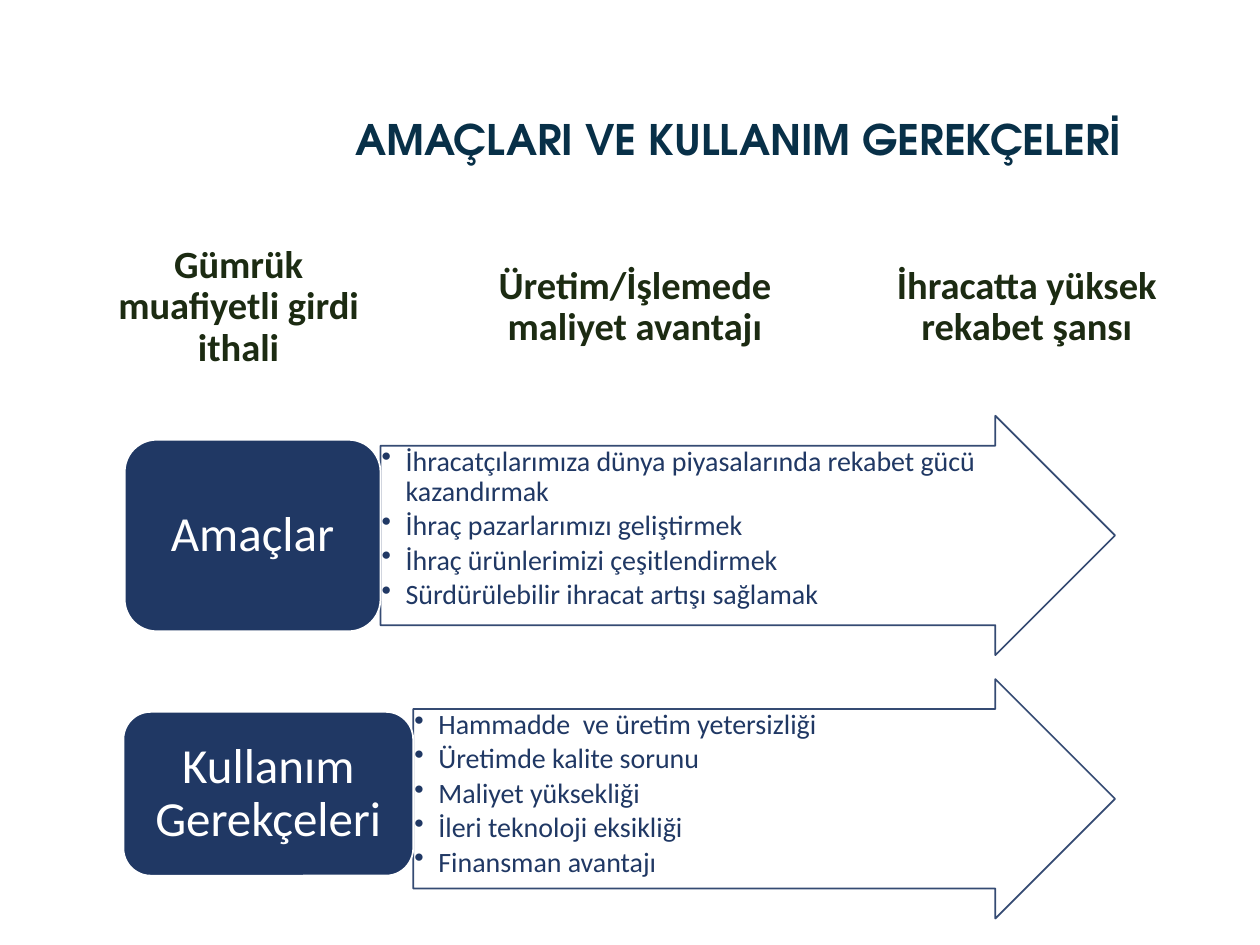
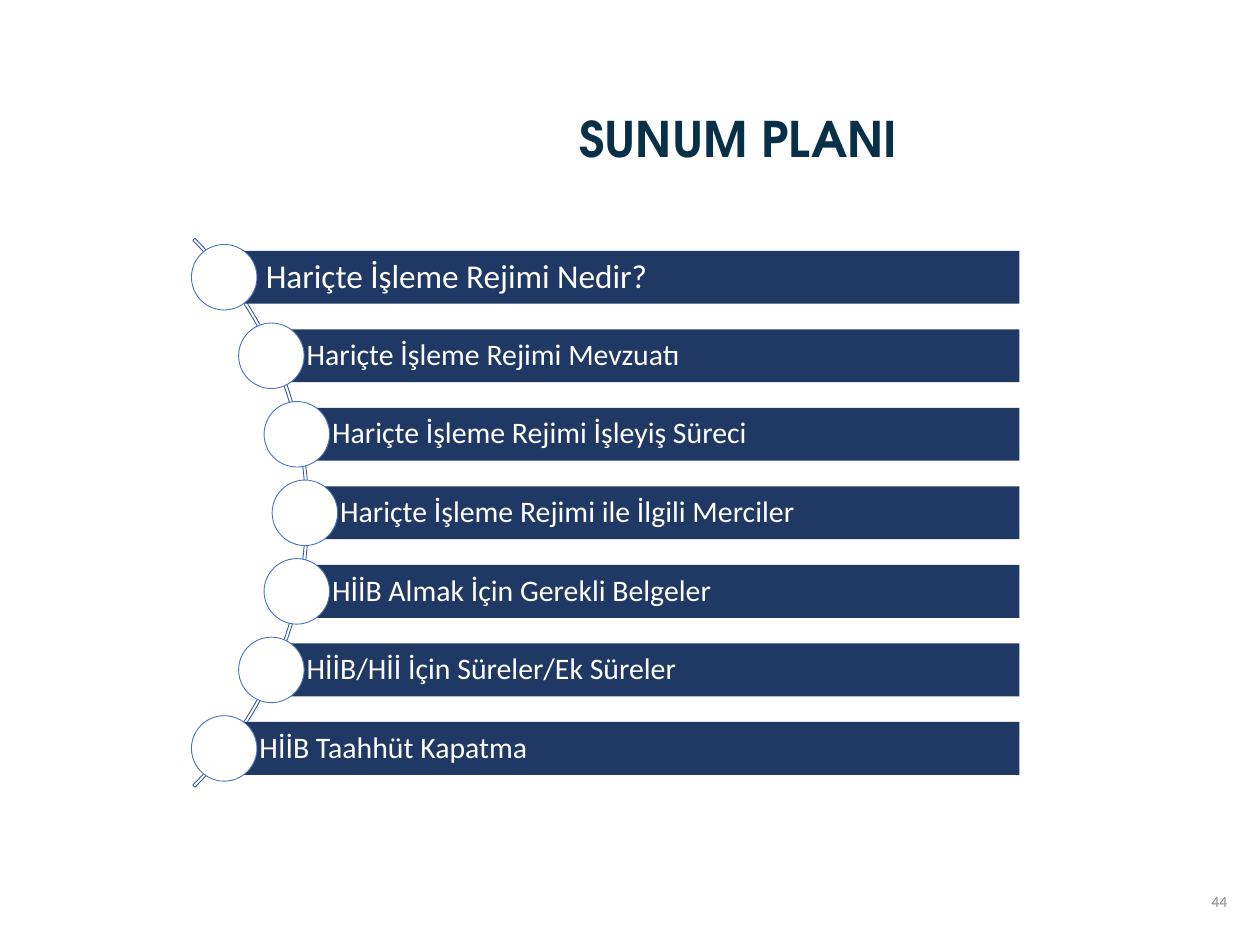
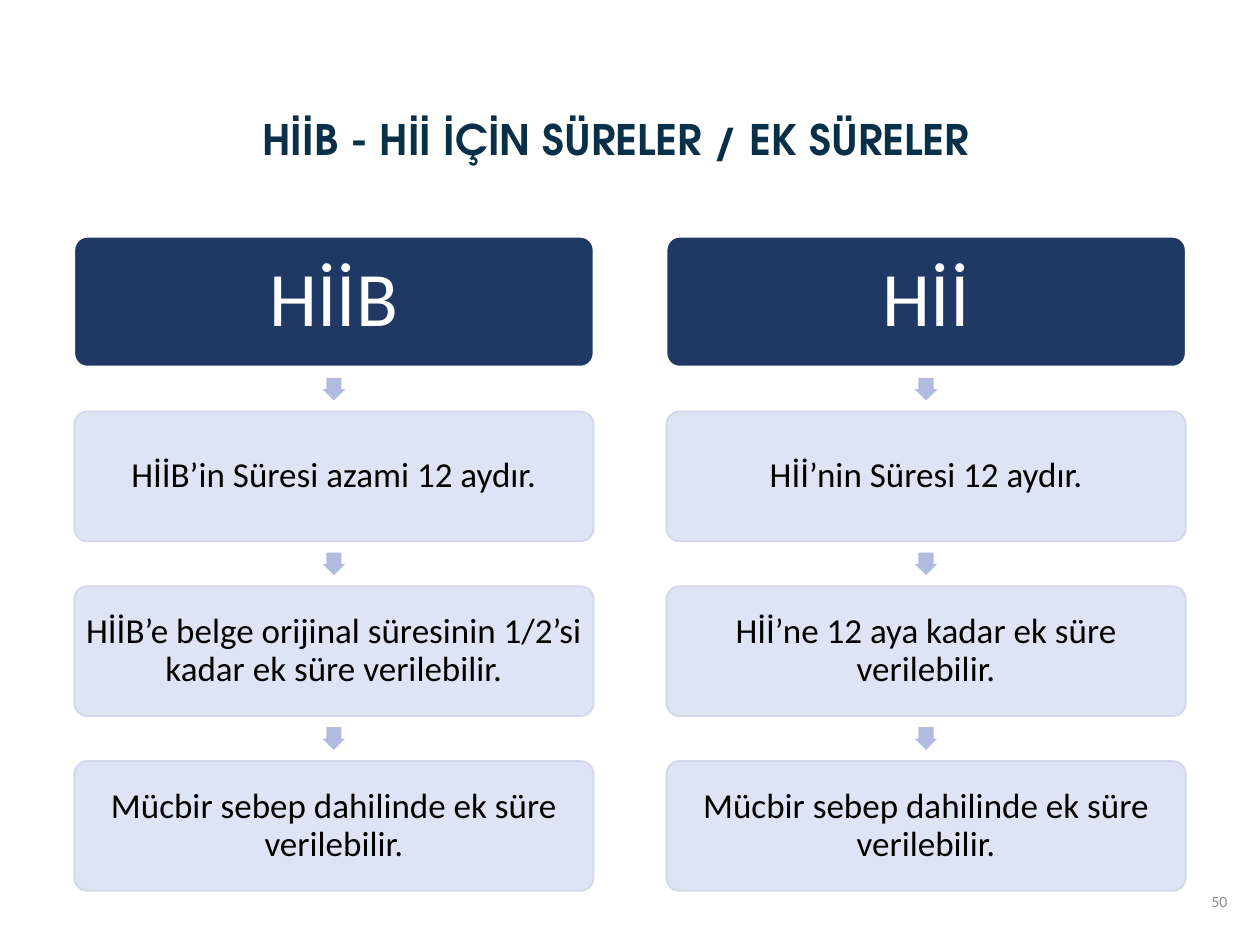
from math import sqrt

from lxml.etree import SubElement
from pptx import Presentation
from pptx.dml.color import RGBColor
from pptx.enum.shapes import MSO_SHAPE as Shape
from pptx.enum.text import MSO_ANCHOR as Anchor, MSO_AUTO_SIZE as AutoSize, PP_ALIGN as Align
from pptx.oxml.ns import qn
from pptx.util import Inches, Pt

NAVY, WHITE, BLACK = "203864", "FFFFFF", "000000"
TITLE_COLOR, STAGE_COLOR, NUMBER_COLOR = "083048", "1C2B12", "8C8C8C"
CIRCLE_LINE, ARC_LINE = "4472C4", "365B9D"
STEP_FILL, STEP_LINE, STEP_ARROW = "DAE3F3", "CFD5EA", "B0BCDE"
TITLE_FONT, BODY_FONT = "TeX Gyre Adventor", "Calibri"
TITLE_BOX = (1.98, 0.4, 7.76, 1.45)
NUMBER_BOX = (7.59, 6.96, 2.25, 0.4)

STAGES = [
    "Gümrük muafiyetli girdi ithali",
    "Üretim/İşlemede maliyet avantajı",
    "İhracatta yüksek rekabet şansı",
]
# label, label box, arrow top, bullets
REASONS = [
    ("Amaçlar", (0.99, 3.49, 2.03, 1.52), 3.3, [
        "İhracatçılarımıza dünya piyasalarında rekabet gücü kazandırmak",
        "İhraç pazarlarımızı geliştirmek",
        "İhraç ürünlerimizi çeşitlendirmek",
        "Sürdürülebilir ihracat artışı sağlamak",
    ]),
    ("Kullanım Gerekçeleri", (0.98, 5.65, 2.3, 1.3), 5.39, [
        "Hammadde  ve üretim yetersizliği",
        "Üretimde kalite sorunu",
        "Maliyet yüksekliği",
        "İleri teknoloji eksikliği",
        "Finansman avantajı",
    ]),
]
# text, size, left inset
PLAN = [
    ("Hariçte İşleme Rejimi Nedir?", 19, 0.33),
    ("Hariçte İşleme Rejimi Mevzuatı", 17, 0.28),
    ("Hariçte İşleme Rejimi İşleyiş Süreci", 17, 0.28),
    ("Hariçte İşleme Rejimi ile İlgili Merciler", 17, 0.28),
    ("HİİB Almak İçin Gerekli Belgeler", 17, 0.28),
    ("HİİB/Hİİ İçin Süreler/Ek Süreler", 17, 0.28),
    ("HİİB Taahhüt Kapatma", 17, 0.28),
]
PERIODS = {
    "HİİB": [
        "HİİB’in Süresi azami 12 aydır.",
        "HİİB’e belge orijinal süresinin 1/2’si kadar ek süre verilebilir.",
        "Mücbir sebep dahilinde ek süre verilebilir.",
    ],
    "Hİİ": [
        "Hİİ’nin Süresi 12 aydır.",
        "Hİİ’ne 12 aya kadar ek süre verilebilir.",
        "Mücbir sebep dahilinde ek süre verilebilir.",
    ],
}


def rgb(color):
    return RGBColor.from_string(color)


def inches(box):
    return [Inches(length) for length in box]


def add_bullet(paragraph):
    properties = paragraph._p.get_or_add_pPr()
    properties.set("marL", str(Inches(0.19)))
    properties.set("indent", str(-Inches(0.19)))
    SubElement(properties, qn("a:buChar")).set("char", "•")


def write(shape, lines, size, color, insets=(0.1, 0.05, 0.1, 0.05), align=Align.CENTER,
          anchor=Anchor.MIDDLE, font=BODY_FONT, bold=False, bulleted=False):
    frame = shape.text_frame
    frame.word_wrap = True
    frame.auto_size = AutoSize.NONE
    frame.vertical_anchor = anchor
    (frame.margin_left, frame.margin_top,
     frame.margin_right, frame.margin_bottom) = inches(insets)
    for index, line in enumerate(lines):
        paragraph = frame.add_paragraph() if index else frame.paragraphs[0]
        if bulleted:
            add_bullet(paragraph)
            paragraph.space_after = Pt(2.4)
        paragraph.alignment = align
        paragraph.line_spacing = 0.9
        run = paragraph.add_run()
        run.text = line
        run.font.name = font
        run.font.size = Pt(size)
        run.font.bold = bold
        run.font.color.rgb = rgb(color)


def add_shape(slide, preset, box, fill=None, line=None, width=1, adjustments=(), opacity=100):
    shape = slide.shapes.add_shape(preset, *inches(box))
    shape.shadow.inherit = False
    for index, value in enumerate(adjustments):
        shape.adjustments[index] = value
    if fill:
        shape.fill.solid()
        shape.fill.fore_color.rgb = rgb(fill)
    else:
        shape.fill.background()
    if line:
        shape.line.color.rgb = rgb(line)
        shape.line.width = Pt(width)
    else:
        shape.line.fill.background()
    if opacity < 100:
        for color in shape._element.spPr.iter(qn("a:srgbClr")):
            SubElement(color, qn("a:alpha")).set("val", str(opacity * 1000))
    return shape


def add_slide(presentation, title, size=24, align=Align.CENTER, number=None):
    slide = presentation.slides.add_slide(presentation.slide_layouts[5])
    heading = slide.shapes.title
    heading.left, heading.top, heading.width, heading.height = inches(TITLE_BOX)
    write(heading, [title], size, TITLE_COLOR, align=align, font=TITLE_FONT, bold=True)
    if number:
        number_box = slide.shapes.add_textbox(*inches(NUMBER_BOX))
        write(number_box, [number], 9, NUMBER_COLOR, align=Align.RIGHT)
    return slide


def build_purposes(presentation):
    slide = add_slide(presentation, "AMAÇLARI VE KULLANIM GEREKÇELERİ")
    top, height = 1.85, 1.18
    for index, stage in enumerate(STAGES):
        if index:
            box = (0.15 + 3.11 * index, top, 3.49, height)
            shape = add_shape(slide, Shape.CHEVRON, box, WHITE)
        else:
            shape = slide.shapes.add_textbox(*inches((0.71, top, 2.3, height)))
        write(shape, [stage], 22, STAGE_COLOR, (0.1, 0.03, 0.03, 0.03), bold=True)

    arrow_right = 8.85
    for label, label_box, arrow_top, bullets in REASONS:
        arrow_left = label_box[0] + label_box[2]
        arrow = add_shape(slide, Shape.RIGHT_ARROW,
                          (arrow_left, arrow_top, arrow_right - arrow_left, 1.9),
                          WHITE, NAVY, adjustments=(0.75, 0.5), opacity=90)
        write(arrow, bullets, 16, NAVY, (0.01,) * 4, Align.LEFT, Anchor.TOP, bulleted=True)
        label_shape = add_shape(slide, Shape.ROUNDED_RECTANGLE, label_box, NAVY, WHITE)
        write(label_shape, [label], 28, WHITE, (0.12, 0.06, 0.12, 0.06))


def build_plan(presentation):
    """Place the bars along an arc, each starting at the centre of its circle."""
    slide = add_slide(presentation, "SUNUM PLANI", size=28, number="44")
    center_x, center_y, arc_radius, track_radius = -0.63, 4.07, 3.08, 3.05
    bar_right, bar_height, circle_size, pitch = 8.09, 0.42, 0.52, 3.74 / 6
    add_shape(slide, Shape.BLOCK_ARC,
              (center_x - arc_radius, center_y - arc_radius, 2 * arc_radius, 2 * arc_radius),
              line=ARC_LINE, width=0.5, adjustments=(189, 27, 0.004))
    for index, (text, size, inset) in enumerate(PLAN):
        offset = (index - (len(PLAN) - 1) / 2) * pitch
        x, y = center_x + sqrt(track_radius ** 2 - offset ** 2), center_y + offset
        bar = add_shape(slide, Shape.RECTANGLE,
                        (x, y - bar_height / 2, bar_right - x, bar_height), NAVY)
        write(bar, [text], size, WHITE, (inset, 0.05, 0.05, 0.05), Align.LEFT)
        add_shape(slide, Shape.OVAL,
                  (x - circle_size / 2, y - circle_size / 2, circle_size, circle_size),
                  WHITE, CIRCLE_LINE, 0.5)


def build_periods(presentation):
    slide = add_slide(presentation, "HİİB - Hİİ İÇİN SÜRELER / EK SÜRELER",
                      align=Align.LEFT, number="50")
    first_left, column_pitch, first_top, row_pitch = 0.59, 4.7, 1.88, 4.16 / 3
    width, height, arrow_size = 4.12, 1.03, 0.18
    for column, (header, steps) in enumerate(PERIODS.items()):
        left = first_left + column * column_pitch
        header_box = add_shape(slide, Shape.ROUNDED_RECTANGLE, (left, first_top, width, height),
                               NAVY, WHITE, adjustments=(0.1,))
        write(header_box, [header], 44, WHITE, (0.06,) * 4)
        for row, step in enumerate(steps, start=1):
            top = first_top + row * row_pitch
            arrow_top = top - (row_pitch - height + arrow_size) / 2
            add_shape(slide, Shape.DOWN_ARROW,
                      (left + (width - arrow_size) / 2, arrow_top, arrow_size, arrow_size),
                      STEP_ARROW, adjustments=(0.67, 0.5))
            step_box = add_shape(slide, Shape.ROUNDED_RECTANGLE, (left, top, width, height),
                                 STEP_FILL, STEP_LINE, adjustments=(0.1,), opacity=90)
            write(step_box, [step], 20, BLACK, (0.03,) * 4)


def main():
    presentation = Presentation()
    presentation.slide_width, presentation.slide_height = Inches(10), Inches(7.5)
    build_purposes(presentation)
    build_plan(presentation)
    build_periods(presentation)
    presentation.save("out.pptx")


if __name__ == "__main__":
    main()
